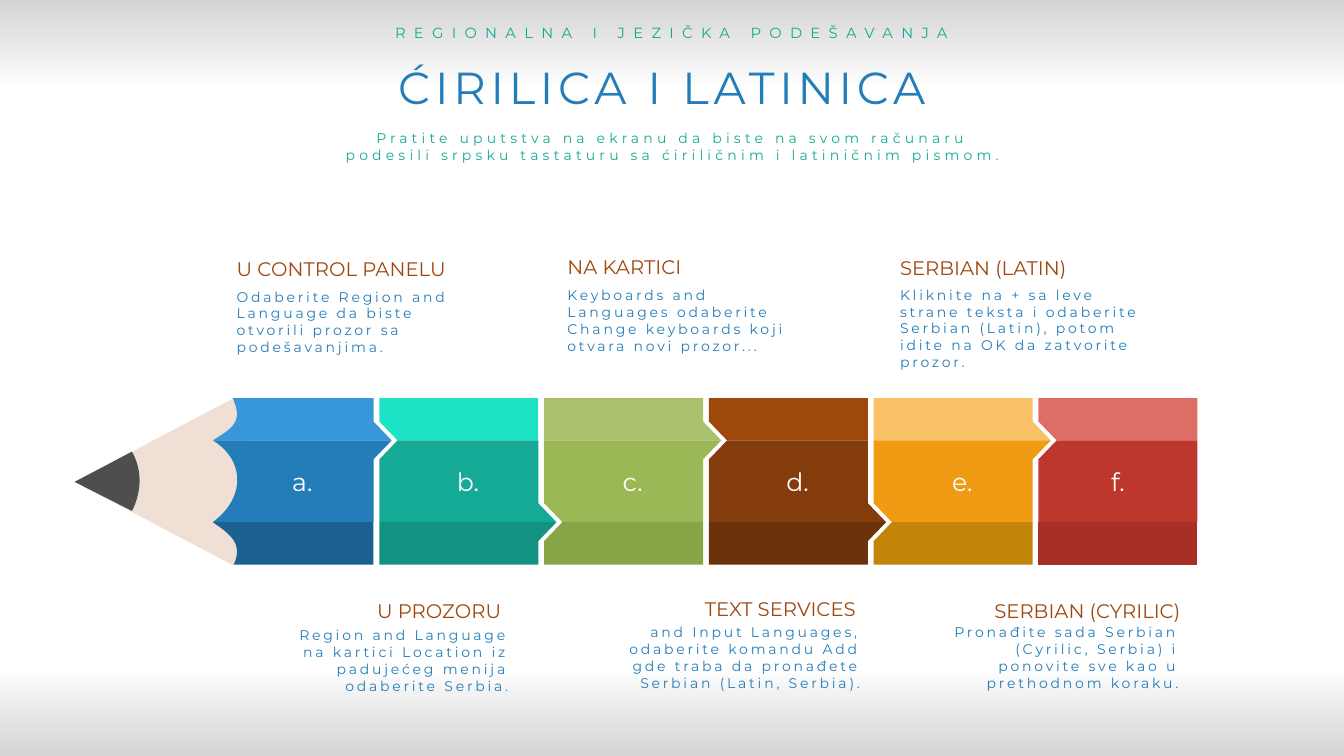
from copy import deepcopy
from dataclasses import dataclass

from pptx import Presentation
from pptx.dml.color import RGBColor
from pptx.enum.text import MSO_ANCHOR, MSO_AUTO_SIZE, PP_ALIGN
from pptx.util import Pt

LEFT, CENTER, RIGHT = PP_ALIGN.LEFT, PP_ALIGN.CENTER, PP_ALIGN.RIGHT
TOP, MIDDLE = MSO_ANCHOR.TOP, MSO_ANCHOR.MIDDLE
GROW = MSO_AUTO_SIZE.SHAPE_TO_FIT_TEXT


@dataclass(frozen=True)
class Theme:
    font: str = "Montserrat"
    blue: str = "237DB9"
    teal: str = "15AA95"
    brown: str = "9E480E"
    white: str = "FFFFFF"
    wood: str = "EFDFD4"
    lead: str = "4E4E4E"
    backdrop: tuple = ((0, "D4D4D4"), (0.12, "FFFFFF"), (0.88, "FFFFFF"), (1, "D4D4D5"))
    title_size: float = 32
    kicker_size: float = 10.5
    body_size: float = 10
    heading_size: float = 14
    letter_size: float = 18


THEME = Theme()

KICKER = "REGIONALNA I JEZIČKA PODEŠAVANJA"
TITLE = "ĆIRILICA I LATINICA"
INTRO = ("Pratite uputstva na ekranu da biste na svom računaru "
         "podesili srpsku tastaturu sa ćiriličnim i latiničnim pismom.")

SEGMENTS = [
    ("a.", ("3797D9", "237DB9", "1B6191")),
    ("b.", ("1CE2C6", "15AA95", "129280")),
    ("c.", ("A9C16D", "9CB756", "89A446")),
    ("d.", ("9E480E", "843C0C", "6C320A")),
    ("e.", ("FAC266", "F09B13", "C38509")),
    ("f.", ("DC6E66", "BE372C", "A62F26")),
]

# heading, (left, top, width), body, (left, top, width, height), alignment
CAPTIONS = [
    ("U CONTROL PANELU", (162, 180, 167),
     "Odaberite Region and Language da biste otvorili prozor sa podešavanjima.",
     (162, 202.3, 192.2, 55.4), LEFT),
    ("U PROZORU", (262.1, 424.1, 103),
     "Region and Language na kartici Location iz padujećeg menija odaberite Serbia.",
     (205.2, 444.2, 164.9, 55.4), RIGHT),
    ("NA KARTICI", (398.2, 178.9, 97.9),
     "Keyboards and Languages odaberite Change keyboards koji otvara novi prozor...",
     (398.2, 201.3, 172.1, 55.4), LEFT),
    ("TEXT SERVICES", (493.9, 422.6, 124.6),
     "and Input Languages, odaberite komandu Add gde traba da pronađete "
     "Serbian (Latin, Serbia).",
     (442.1, 442.1, 179.3, 55.4), RIGHT),
    ("SERBIAN (LATIN)", (635.8, 179.2, 134.6),
     "Kliknite na + sa leve strane teksta i odaberite Serbian (Latin), potom "
     "idite na OK da zatvorite prozor.",
     (635.8, 200.9, 195.8, 67.7), LEFT),
    ("SERBIAN (CYRILIC)", (702.7, 424.1, 147.6),
     "Pronađite sada Serbian (Cyrilic, Serbia) i ponovite sve kao u prethodnom koraku.",
     (660.2, 442.1, 188.6, 55.4), RIGHT),
]

BAND_EDGES = (284.4, 314.6, 373, 403.4)
FIRST_LEFT, PITCH, SEGMENT_WIDTH = 153.3, 117.7, 113.5
TIP, TIP_HALF = 13, 13.5
SCALLOPS = [
    ((166.3, 284.4), (174, 301.7), (165.6, 306), (152, 314.6)),
    ((152, 314.6), (175.7, 329), (175, 356.4), (152, 373)),
    ((152, 373), (165.6, 382.3), (173.5, 388.8), (167, 403.4)),
]
WOOD = [(53.3, 344.2)], ((167, 284.4), (189, 324), (186.5, 366), (167, 404))
LEAD = [(53.3, 344.2)], ((94.3, 322.6), (102.2, 337), (100.8, 352), (94.3, 365))


def curve(start, first, second, end, steps=20):
    points = []
    for step in range(steps + 1):
        t = step / steps
        weights = ((1 - t) ** 3, 3 * t * (1 - t) ** 2, 3 * t * t * (1 - t), t ** 3)
        points.append(tuple(
            sum(weight * point[axis] for weight, point in zip(weights, (start, first, second, end)))
            for axis in (0, 1)))
    return points


def notched_edge(x, joint, top, bottom):
    if joint is None:
        return [(x, top), (x, bottom)]
    levels = {top, bottom}
    levels |= {y for y in (joint - TIP_HALF, joint, joint + TIP_HALF) if top < y < bottom}
    return [(x + TIP * max(0, 1 - abs(y - joint) / TIP_HALF), y) for y in sorted(levels)]


def add_outline(page, points, color):
    corners = [(Pt(x), Pt(y)) for x, y in points]
    builder = page.shapes.build_freeform(*corners[0], scale=1.0)
    builder.add_line_segments(corners[1:], close=True)
    shape = builder.convert_to_shape()
    shape.shadow.inherit = False
    shape.fill.solid()
    shape.fill.fore_color.rgb = RGBColor.from_string(color)
    shape.line.fill.background()
    return shape


def write(shape, text, size, color, align, spacing=0, anchor=TOP, wrap=True):
    frame = shape.text_frame
    frame.text = text
    frame.word_wrap = wrap
    frame.vertical_anchor = anchor
    para = frame.paragraphs[0]
    para.alignment = align
    para.font.name = THEME.font
    para.font.size = Pt(size)
    para.font.color.rgb = RGBColor.from_string(color)
    if spacing:
        para._p.pPr.defRPr.set("spc", str(round(spacing * 100)))


def add_text(page, place, *style, **options):
    box = page.shapes.add_textbox(*map(Pt, place))
    write(box, *style, **options)
    box.text_frame.auto_size = GROW


def paint_background(page):
    fill = page.background.fill
    fill.gradient()
    fill.gradient_angle = 270
    stop_list = page._element.find(".//{*}gsLst")
    while len(stop_list) < len(THEME.backdrop):
        stop_list.append(deepcopy(stop_list[0]))
    for stop, (position, color) in zip(fill.gradient_stops, THEME.backdrop):
        stop.position = position
        stop.color.rgb = RGBColor.from_string(color)


def draw_pencil(page):
    for (point, base), color in ((WOOD, THEME.wood), (LEAD, THEME.lead)):
        add_outline(page, point + curve(*base), color)
    joints = [None] + [BAND_EDGES[1 + i % 2] for i in range(len(SEGMENTS) - 1)] + [None]
    for i, (letter, colors) in enumerate(SEGMENTS):
        left = FIRST_LEFT + i * PITCH
        for band, color in enumerate(colors):
            top, bottom = BAND_EDGES[band:band + 2]
            start = notched_edge(left, joints[i], top, bottom) if i else curve(*SCALLOPS[band])
            end = notched_edge(left + SEGMENT_WIDTH, joints[i + 1], top, bottom)
            shape = add_outline(page, start + end[::-1], color)
            if band == 1:
                write(shape, letter, THEME.letter_size, THEME.white, CENTER, anchor=MIDDLE)


def main():
    deck = Presentation()
    deck.slide_width, deck.slide_height = Pt(960), Pt(540)
    page = deck.slides.add_slide(deck.slide_layouts[5])
    paint_background(page)
    draw_pencil(page)

    title = page.shapes.title
    title.left, title.top, title.width, title.height = map(Pt, (277.2, 38.9, 398.9, 46.1))
    write(title, TITLE, THEME.title_size, THEME.blue, LEFT, spacing=3.4, wrap=False)
    title.text_frame.auto_size = GROW

    add_text(page, (234.7, 13.7, 490.3, 20.2), KICKER, THEME.kicker_size, THEME.teal,
             CENTER, spacing=6)
    add_text(page, (237.6, 89.3, 485.3, 31.7), INTRO, THEME.body_size, THEME.teal,
             CENTER, spacing=3)
    for heading, heading_place, body, body_place, align in CAPTIONS:
        add_text(page, (*heading_place, 24.5), heading, THEME.heading_size, THEME.brown,
                 align, wrap=False)
        add_text(page, body_place, body, THEME.body_size, THEME.blue, align, spacing=2)

    deck.save("out.pptx")


if __name__ == "__main__":
    main()
